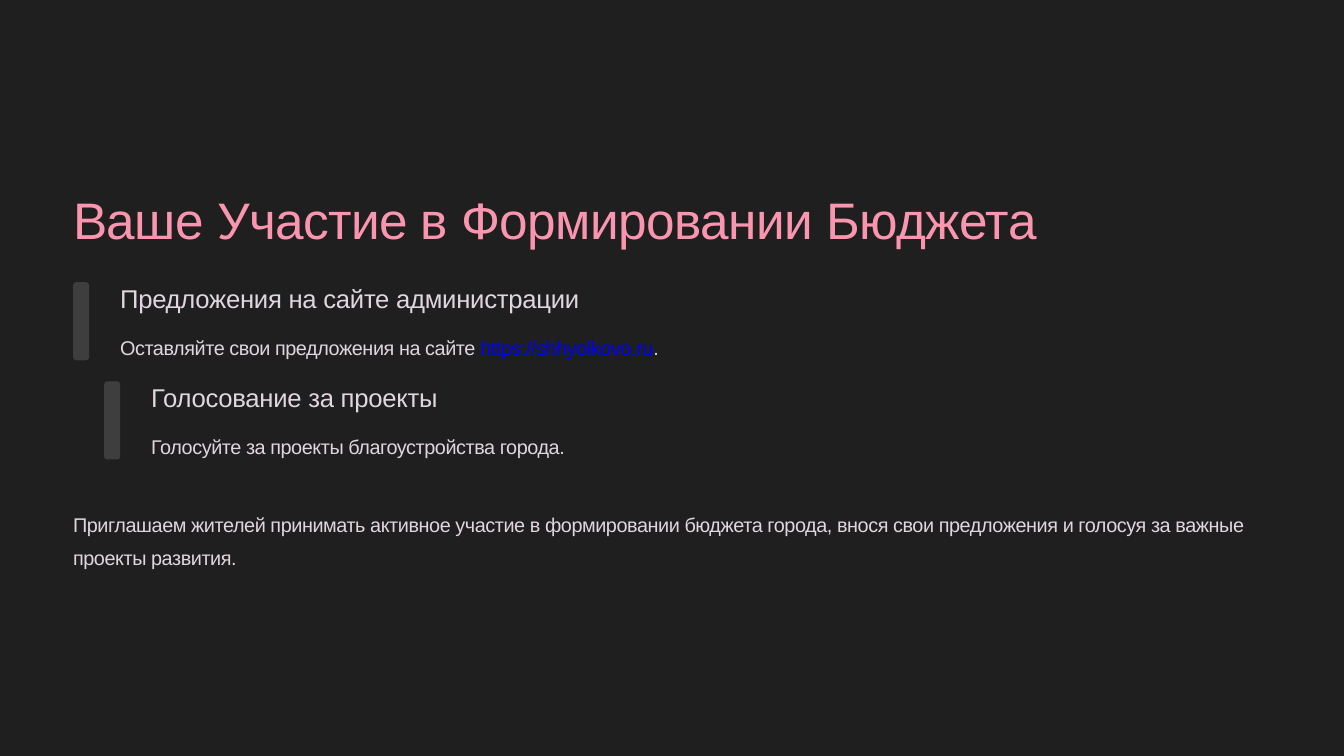
from dataclasses import dataclass

from pptx import Presentation
from pptx.dml.color import RGBColor
from pptx.enum.shapes import MSO_SHAPE
from pptx.enum.text import MSO_ANCHOR, MSO_AUTO_SIZE, PP_ALIGN
from pptx.shapes.base import BaseShape
from pptx.slide import Slide
from pptx.util import Inches, Pt

COLORS = {
    "background": "1F1F1F",
    "title": "FA95AF",
    "text": "E0D6DE",
    "bar": "3E3E3E",
    "address": "0000FF",
}
MARGIN = 0.87
STEPS_TOP, STEP_PITCH, STEP_INDENT = 3.36, 1.18, 0.37
BAR_WIDTH, BAR_HEIGHT = 0.19, 0.93
TEXT_OFFSET, DETAIL_OFFSET = 0.56, 0.53


@dataclass(frozen=True)
class TextStyle:
    size: float
    line: float
    tracking: float
    color: str = "text"


@dataclass(frozen=True)
class Step:
    heading: str
    heading_width: float
    detail: str
    detail_width: float
    address: str = ""
    ending: str = ""


TITLE = TextStyle(44, 55, -0.5, "title")
HEADING = TextStyle(22, 27, -0.2)
BODY = TextStyle(17, 28, -0.4)

STEPS = [
    Step("Предложения на сайте администрации", 5.55,
         "Оставляйте свои предложения на сайте ", 6.56,
         "https://shhyolkovo.ru", "."),
    Step("Голосование за проекты", 3.51,
         "Голосуйте за проекты благоустройства города.", 5.11),
]
INVITATION = (
    "Приглашаем жителей принимать активное участие в формировании бюджета "
    "города, внося свои предложения и голосуя за важные проекты развития."
)


def rgb(name: str) -> RGBColor:
    return RGBColor.from_string(COLORS[name])


def place(shape: BaseShape, left: float, top: float, width: float, height: float) -> None:
    shape.left, shape.top = Inches(left), Inches(top)
    shape.width, shape.height = Inches(width), Inches(height)


def write(shape: BaseShape, style: TextStyle, text: str,
          address: str = "", ending: str = "") -> None:
    """Fill a shape with one paragraph, underlining the web address in it."""
    frame = shape.text_frame
    frame.margin_left = frame.margin_top = frame.margin_right = frame.margin_bottom = 0
    frame.word_wrap = True
    frame.auto_size = MSO_AUTO_SIZE.NONE
    frame.vertical_anchor = MSO_ANCHOR.TOP
    paragraph = frame.paragraphs[0]
    paragraph.text = text
    paragraph.alignment = PP_ALIGN.LEFT
    paragraph.line_spacing = Pt(style.line)
    for part in filter(None, (address, ending)):
        paragraph.add_run().text = part
    for run in paragraph.runs:
        is_address = run.text == address
        run.font.name = "Arial"
        run.font.size = Pt(style.size)
        run.font.underline = is_address
        run.font.color.rgb = rgb("address" if is_address else style.color)
        run.font._element.set("spc", str(round(style.tracking * 100)))


def add_text(slide: Slide, left: float, top: float, width: float, height: float,
             style: TextStyle, text: str, address: str = "", ending: str = "") -> None:
    box = slide.shapes.add_textbox(
        Inches(left), Inches(top), Inches(width), Inches(height))
    write(box, style, text, address, ending)


def add_step(slide: Slide, step: Step, index: int) -> None:
    left = MARGIN + index * STEP_INDENT
    top = STEPS_TOP + index * STEP_PITCH
    bar = slide.shapes.add_shape(
        MSO_SHAPE.ROUNDED_RECTANGLE,
        Inches(left), Inches(top), Inches(BAR_WIDTH), Inches(BAR_HEIGHT))
    bar.adjustments[0] = 0.2
    bar.shadow.inherit = False
    bar.fill.solid()
    bar.fill.fore_color.rgb = rgb("bar")
    bar.line.fill.background()

    text_left = left + TEXT_OFFSET
    add_text(slide, text_left, top, step.heading_width, 0.37, HEADING, step.heading)
    add_text(slide, text_left, top + DETAIL_OFFSET, step.detail_width, 0.36,
             BODY, step.detail, step.address, step.ending)


def main() -> None:
    deck = Presentation()
    deck.slide_width, deck.slide_height = Inches(16), Inches(9)
    slide = deck.slides.add_slide(deck.slide_layouts[5])
    slide.background.fill.solid()
    slide.background.fill.fore_color.rgb = rgb("background")

    title = slide.shapes.title
    place(title, MARGIN, 2.21, 11.73, 0.74)
    write(title, TITLE, "Ваше Участие в Формировании Бюджета")
    for index, step in enumerate(STEPS):
        add_step(slide, step, index)
    add_text(slide, MARGIN, 6, 16 - 2 * MARGIN, 0.75, BODY, INVITATION)
    deck.save("out.pptx")


if __name__ == "__main__":
    main()
